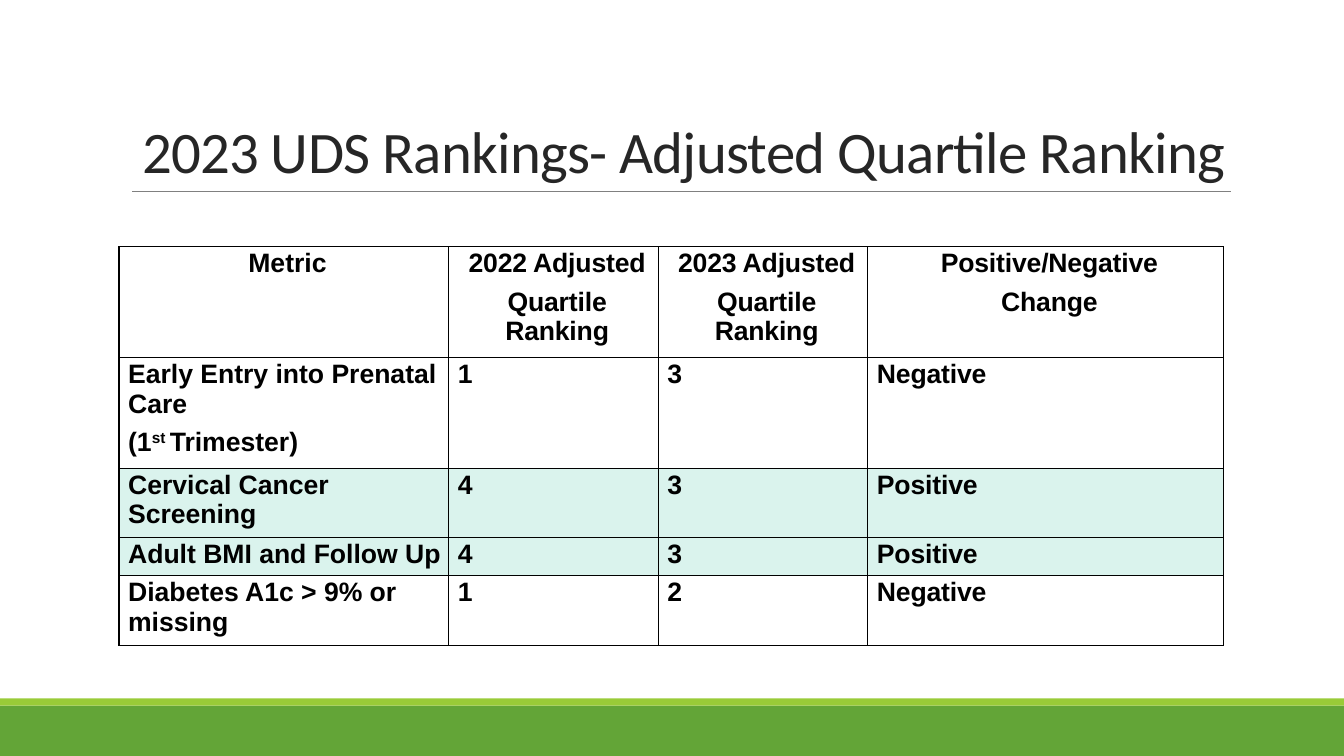
from pptx import Presentation
from pptx.dml.color import RGBColor
from pptx.enum import shapes, text
from pptx.oxml import parse_xml
from pptx.oxml.ns import nsdecls
from pptx.util import Cm, Pt

# Content: a cell is a tuple of paragraphs; ^ marks off raised text
TITLE = "2023 UDS Rankings- Adjusted Quartile Ranking"
ROWS = [
    [("Metric",), ("2022 Adjusted", "Quartile Ranking"),
     ("2023 Adjusted", "Quartile Ranking"), ("Positive/Negative", "Change")],
    [("Early Entry into Prenatal Care", "(1^st ^Trimester)"), ("1",), ("3",), ("Negative",)],
    [("Cervical Cancer Screening",), ("4",), ("3",), ("Positive",)],
    [("Adult BMI and Follow Up",), ("4",), ("3",), ("Positive",)],
    [("Diabetes A1c > 9% or missing",), ("1",), ("2",), ("Negative",)],
]
WIDTHS = [8.31, 5.28, 5.28, 8.97]
HEIGHTS = [2.79, 2.79, 1.75, 0.96, 1.75]
THEME = dict(
    green="63A537", lime="99CB38", rule="808080", ink="262626", black="000000",
    white="FFFFFF", mint="DAF3ED", head="Calibri", body="Arial", big=42, small=19)
WIDE, HIGH = 33.87, 19.05


def tint(name):
    return RGBColor.from_string(THEME[name])


def write(frame, lines, font="body", size="small", color="black", bold=False,
          align=text.PP_ALIGN.LEFT, gap=0, lead=1.0, track=0):
    frame.word_wrap = True
    for i, line in enumerate(lines):
        par = frame.paragraphs[0] if i == 0 else frame.add_paragraph()
        par.alignment, par.line_spacing = align, lead
        par.space_before = Pt(gap if i else 0)
        for j, part in enumerate(line.split("^")):
            run = par.add_run()
            run.text = part
            run.font.name, run.font.size = THEME[font], Pt(THEME[size])
            run.font.bold = bold
            run.font.color.rgb = tint(color)
            props = run._r.get_or_add_rPr()
            props.set("spc", str(track))
            if j % 2:
                props.set("baseline", "30000")


def edge(cell):
    props = cell._tc.get_or_add_tcPr()
    for i, side in enumerate(("lnL", "lnR", "lnT", "lnB")):
        props.insert(i, parse_xml(
            f'<a:{side} {nsdecls("a")} w="12700"><a:solidFill>'
            f'<a:srgbClr val="{THEME["black"]}"/></a:solidFill></a:{side}>'))


def main():
    deck = Presentation()
    deck.slide_width, deck.slide_height = Cm(WIDE), Cm(HIGH)
    slide = deck.slides.add_slide(deck.slide_layouts[6])

    # Footer bands
    for top, tall, color in ((17.78, 1.27, "green"), (17.6, 0.18, "lime")):
        band = slide.shapes.add_shape(
            shapes.MSO_SHAPE.RECTANGLE, 0, Cm(top), Cm(WIDE), Cm(tall))
        band.shadow.inherit = False
        band.fill.solid()
        band.fill.fore_color.rgb = tint(color)
        band.line.fill.background()

    # Title and rule
    rule = slide.shapes.add_connector(
        shapes.MSO_CONNECTOR.STRAIGHT, Cm(3.33), Cm(4.83), Cm(31.01), Cm(4.83))
    rule.line.color.rgb, rule.line.width = tint("rule"), Pt(0.5)
    rule._element.spPr.append(parse_xml(f'<a:effectLst {nsdecls("a")}/>'))
    box = slide.shapes.add_textbox(Cm(3.33), Cm(1.85), Cm(30.3), Cm(2.95))
    box.text_frame.vertical_anchor = text.MSO_ANCHOR.BOTTOM
    write(box.text_frame, [TITLE], font="head", size="big", color="ink",
          lead=0.85, track=-50)

    # Ranking table
    table = slide.shapes.add_table(
        len(ROWS), len(WIDTHS), Cm(3), Cm(6.22),
        Cm(sum(WIDTHS)), Cm(sum(HEIGHTS))).table
    for col, width in zip(table.columns, WIDTHS):
        col.width = Cm(width)
    for r, row in enumerate(ROWS):
        table.rows[r].height = Cm(HEIGHTS[r])
        for c, lines in enumerate(row):
            cell = table.cell(r, c)
            cell.margin_left, cell.margin_right = Cm(0.23), Cm(0.05)
            cell.margin_top, cell.margin_bottom = Cm(0.05), 0
            cell.fill.solid()
            cell.fill.fore_color.rgb = tint("mint" if lines and row[3] == ("Positive",) else "white")
            edge(cell)
            write(cell.text_frame, lines, bold=True, gap=6.3, track=0 if c == 0 else -10,
                  align=text.PP_ALIGN.LEFT if r else text.PP_ALIGN.CENTER)

    deck.save("out.pptx")


if __name__ == "__main__":
    main()
